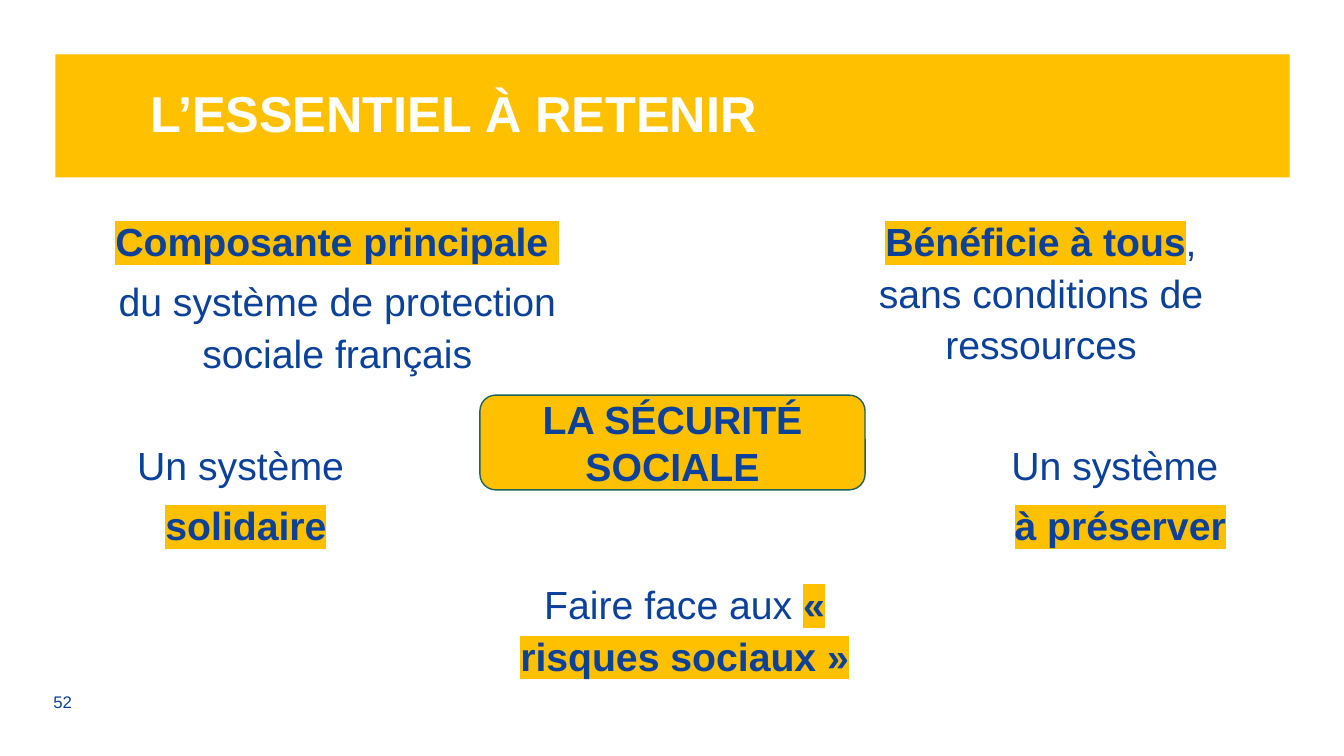
from pptx import Presentation
from pptx.dml.color import RGBColor
from pptx.enum.shapes import MSO_SHAPE as Shape
from pptx.enum.text import MSO_ANCHOR as Anchor, MSO_AUTO_SIZE as Fit, PP_ALIGN as Align
from pptx.oxml.ns import qn
from pptx.util import Inches, Pt
from lxml.etree import SubElement as Sub

BLUE = RGBColor(0x0C, 0x41, 0x9A)
GOLD = RGBColor(0xFF, 0xC0, 0x00)
GREEN = RGBColor(0x1E, 0x62, 0x59)
WHITE = RGBColor(0xFF, 0xFF, 0xFF)

# Places of the notes around the centre, and their paragraphs of (text, marked) runs
NOTES = [
    ((8.23, 2.06, 3.94, 1.22),
     [[("Bénéficie à tous", True), (", sans conditions de ressources", False)]]),
    ((4.31, 5.66, 4.71, 1.47),
     [[("Faire face aux ", False), ("« risques sociaux »", True)]]),
    ((0.68, 4.28, 3.27, 1.39),
     [[("Un système ", False)], [("solidaire", True)]]),
    ((8.63, 4.28, 4.71, 1.15),
     [[("Un système ", False)], [("à préserver", True)]]),
]
MAIN = [[("Composante principale ", True)],
        [("du système de protection sociale français", False)]]


def place(shape, box):
    shape.left, shape.top, shape.width, shape.height = map(Inches, box)


def setup(frame, anchor):
    frame.word_wrap = True
    frame.auto_size = Fit.NONE
    frame.vertical_anchor = anchor


def add_run(para, text, size, color=BLUE, bold=False, marked=False):
    run = para.add_run()
    run.text = text
    font = run.font
    font.size, font.bold = Pt(size), bold
    font.color.rgb = color
    if marked:
        light = Sub(font._element, qn("a:highlight"))
        Sub(light, qn("a:srgbClr")).set("val", str(GOLD))
    font.name = "Arial"


def fill_note(frame, paras):
    setup(frame, Anchor.TOP)
    for i, runs in enumerate(paras):
        para = frame.add_paragraph() if i else frame.paragraphs[0]
        para.alignment = Align.CENTER
        para.line_spacing = 1.1
        para.space_before = Pt(6)
        props = para._p.get_or_add_pPr()
        props.set("marL", str(Inches(0.25)))
        props.set("indent", "0")
        Sub(props, qn("a:buNone"))
        for text, marked in runs:
            add_run(para, text, 28, bold=marked, marked=marked)


def add_note(slide, box, paras):
    fill_note(slide.shapes.add_textbox(*map(Inches, box)).text_frame, paras)


def set_title(title, text):
    place(title, (0.55, 0.54, 12.24, 1.22))
    title.fill.solid()
    title.fill.fore_color.rgb = GOLD
    frame = title.text_frame
    setup(frame, Anchor.MIDDLE)
    frame.margin_left = Inches(0.94)
    frame.margin_top = frame.margin_right = frame.margin_bottom = Inches(0.08)
    para = frame.paragraphs[0]
    para.alignment = Align.LEFT
    para.line_spacing = 0.9
    add_run(para, text, 36, WHITE, True)


def add_hub(slide, text):
    hub = slide.shapes.add_shape(Shape.ROUNDED_RECTANGLE,
                                 *map(Inches, (4.76, 3.92, 3.82, 0.94)))
    hub.shadow.inherit = False
    hub.fill.solid()
    hub.fill.fore_color.rgb = GOLD
    hub.line.color.rgb = GREEN
    hub.line.width = Pt(1)
    setup(hub.text_frame, Anchor.MIDDLE)
    para = hub.text_frame.paragraphs[0]
    para.alignment = Align.CENTER
    add_run(para, text, 28, bold=True)


def add_number(slide, text):
    box = slide.shapes.add_textbox(*map(Inches, (0.43, 6.81, 0.79, 0.31)))
    setup(box.text_frame, Anchor.MIDDLE)
    add_run(box.text_frame.paragraphs[0], text, 12)


def main():
    prs = Presentation()
    prs.slide_width, prs.slide_height = Inches(13.33), Inches(7.5)
    slide = prs.slides.add_slide(prs.slide_layouts[1])

    # Title band and main point
    set_title(slide.shapes.title, "L’ESSENTIEL À RETENIR")
    body = slide.placeholders[1]
    place(body, (0.55, 2.06, 5.34, 1.39))
    fill_note(body.text_frame, MAIN)

    # Centre and the notes around it
    add_hub(slide, "LA SÉCURITÉ SOCIALE")
    for box, paras in NOTES:
        add_note(slide, box, paras)

    # Slide number
    add_number(slide, "52")
    prs.save("out.pptx")


if __name__ == "__main__":
    main()
